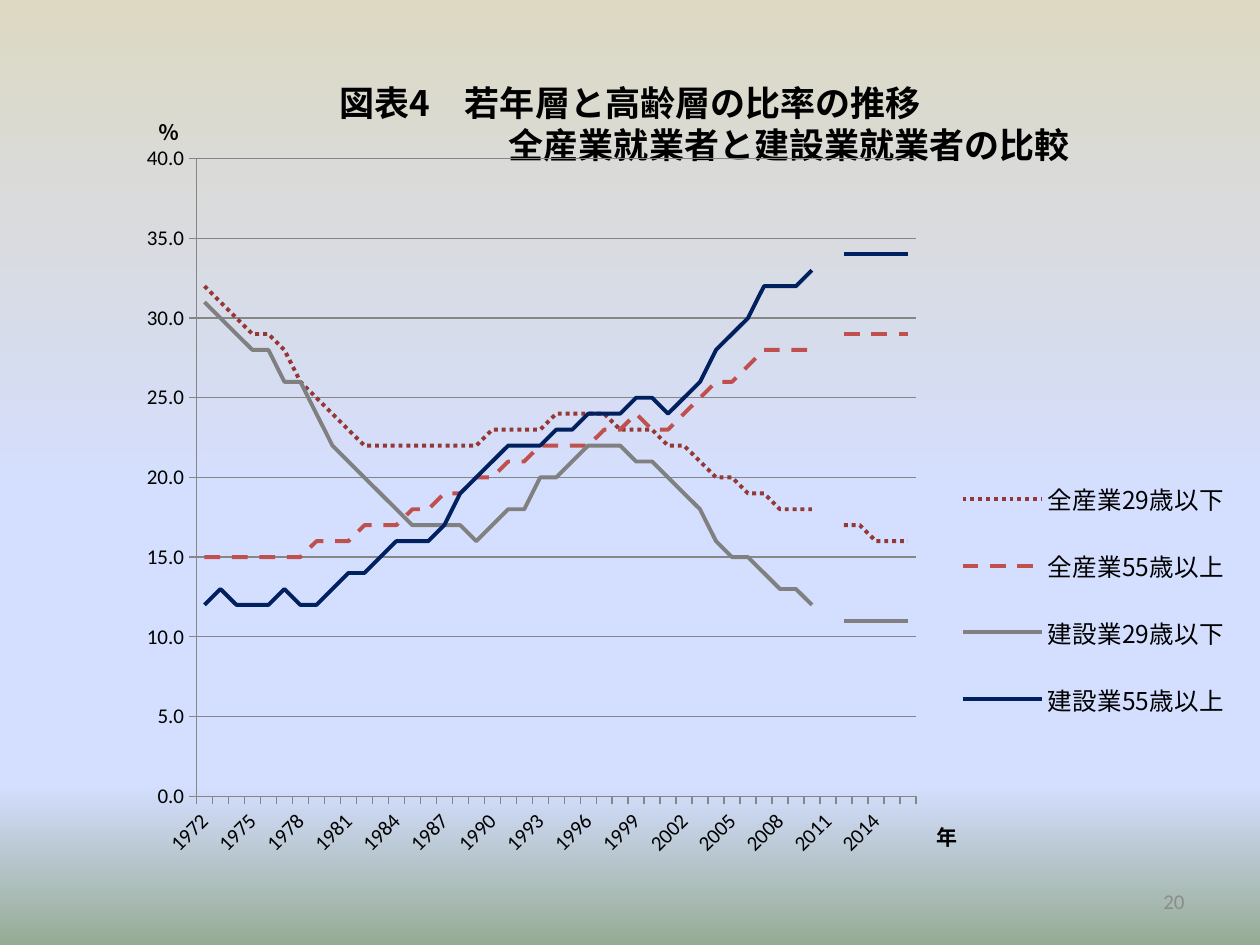
from lxml.etree import SubElement
from pptx import Presentation
from pptx.chart.data import CategoryChartData
from pptx.dml.color import RGBColor
from pptx.enum.chart import XL_CHART_TYPE, XL_LEGEND_POSITION, XL_TICK_MARK
from pptx.enum.dml import MSO_LINE
from pptx.enum.text import MSO_ANCHOR, MSO_AUTO_SIZE, PP_ALIGN
from pptx.oxml.ns import qn
from pptx.util import Inches, Pt

TITLE_LINES = [("図表4　若年層と高齢層の比率の推移", 0),
               ("全産業就業者と建設業就業者の比較", 2.53)]  # text, indent in inches
PAGE_NUMBER = "20"
YEAR_TITLE, SHARE_TITLE = "年", "％"
YEARS = [str(year) for year in range(1972, 2017)]
SERIES = [
    ("全産業29歳以下", "953735", MSO_LINE.ROUND_DOT,
     [32, 31, 30, 29, 29, 28, 26, 25, 24, 23, 22, 22, 22, 22, 22,
      22, 22, 22, 23, 23, 23, 23, 24, 24, 24, 24, 23, 23, 23, 22,
      22, 21, 20, 20, 19, 19, 18, 18, 18, None, 17, 17, 16, 16, 16]),
    ("全産業55歳以上", "C0504D", MSO_LINE.DASH,
     [15, 15, 15, 15, 15, 15, 15, 16, 16, 16, 17, 17, 17, 18, 18,
      19, 19, 20, 20, 21, 21, 22, 22, 22, 22, 23, 23, 24, 23, 23,
      24, 25, 26, 26, 27, 28, 28, 28, 28, None, 29, 29, 29, 29, 29]),
    ("建設業29歳以下", "808080", MSO_LINE.SOLID,
     [31, 30, 29, 28, 28, 26, 26, 24, 22, 21, 20, 19, 18, 17, 17,
      17, 17, 16, 17, 18, 18, 20, 20, 21, 22, 22, 22, 21, 21, 20,
      19, 18, 16, 15, 15, 14, 13, 13, 12, None, 11, 11, 11, 11, 11]),
    ("建設業55歳以上", "002060", MSO_LINE.SOLID,
     [12, 13, 12, 12, 12, 13, 12, 12, 13, 14, 14, 15, 16, 16, 16,
      17, 19, 20, 21, 22, 22, 22, 23, 23, 24, 24, 24, 25, 25, 24,
      25, 26, 28, 29, 30, 32, 32, 32, 33, None, 34, 34, 34, 34, 34]),
]
CHART_WIDTH, CHART_HEIGHT = 10.08, 7.5
THEME = {
    "latin": "Calibri", "cjk": "Noto Sans CJK JP",
    "text": "000000", "muted": "8C8C8C", "grid": "868686",
    "title": 20, "legend": 14, "label": 12, "line": 2.25, "thin": 0.75,
    "background": [(0, "DDD9C3"), (53, "D4DEFF"), (83, "D4DEFF"), (100, "96AB94")],
}


def style_font(font, size, color=THEME["text"], name=THEME["cjk"], bold=False):
    font.size, font.bold, font.name = Pt(size), bold, name
    font.color.rgb = RGBColor.from_string(color)
    latin = font._rPr.find(qn("a:latin"))
    latin.addnext(latin.makeelement(qn("a:ea"), {"typeface": THEME["cjk"]}))


def write(para, text, **style):
    span = para.add_run()
    span.text = text
    style_font(span.font, **style)


def style_line(line, color, width):
    line.color.rgb = RGBColor.from_string(color)
    line.width = Pt(width)


def set_layout(element, index, **inches):
    """Fix a chart part at x, y, w, h in inches within the chart area."""
    for old in element.findall(qn("c:layout")):
        element.remove(old)
    layout = element.makeelement(qn("c:layout"), {})
    element.insert(index, layout)
    manual = SubElement(layout, qn("c:manualLayout"))
    if element.tag == qn("c:plotArea"):
        SubElement(manual, qn("c:layoutTarget"), val="inner")
    for side in ("x", "y"):
        SubElement(manual, qn(f"c:{side}Mode"), val="edge")
    for side, length in inches.items():
        whole = CHART_WIDTH if side in "xw" else CHART_HEIGHT
        SubElement(manual, qn(f"c:{side}"), val=str(length / whole))


def paint_background(page):
    fill = page.background.fill
    fill.gradient()
    fill.gradient_angle = 270
    stops = page._element.find(".//" + qn("a:gsLst"))
    stops.clear()
    for percent, color in THEME["background"]:
        stop = SubElement(stops, qn("a:gs"), pos=str(percent * 1000))
        SubElement(stop, qn("a:srgbClr"), val=color)


def add_title(page):
    title = page.shapes.title
    title.left, title.top = Inches(0.5), Inches(0.48)
    title.width, title.height = Inches(9), Inches(1)
    frame = title.text_frame
    frame.auto_size = MSO_AUTO_SIZE.NONE
    frame.vertical_anchor = MSO_ANCHOR.MIDDLE
    for number, (text, indent) in enumerate(TITLE_LINES):
        para = frame.add_paragraph() if number else frame.paragraphs[0]
        para.alignment = PP_ALIGN.CENTER
        para._p.get_or_add_pPr().set("marL", str(Inches(indent)))
        write(para, text, size=THEME["title"], bold=True)


def style_axis(axis, title, rotation, x, y):
    axis.major_tick_mark = XL_TICK_MARK.OUTSIDE
    axis.minor_tick_mark = XL_TICK_MARK.NONE
    style_line(axis.format.line, THEME["grid"], THEME["thin"])
    style_font(axis.tick_labels.font, THEME["label"], name=THEME["latin"])
    axis._element.find(f"{qn('c:txPr')}/{qn('a:bodyPr')}").set("rot", str(rotation * 60000))
    frame = axis.axis_title.text_frame
    write(frame.paragraphs[0], title, size=THEME["label"], bold=True)
    heading = axis.axis_title._element
    body = heading.find(".//" + qn("a:bodyPr"))
    body.set("rot", "0")
    body.set("vert", "horz")
    set_layout(heading, 1, x=x, y=y)


def add_share_chart(page):
    data = CategoryChartData(number_format="0.0")
    data.categories = YEARS
    for name, _, _, values in SERIES:
        data.add_series(name, values)
    chart = page.shapes.add_chart(XL_CHART_TYPE.LINE, 0, 0, Inches(CHART_WIDTH),
                                  Inches(CHART_HEIGHT), data).chart
    chart.has_title = False
    style_font(chart.font, 10, name=THEME["latin"])
    plot = chart.plots[0]
    plot.vary_by_categories = False
    for series, (_, color, dash, _) in zip(plot.series, SERIES):
        series.smooth = False
        style_line(series.format.line, color, THEME["line"])
        series.format.line.dash_style = dash

    years, shares = chart.category_axis, chart.value_axis
    style_axis(years, YEAR_TITLE, -45, x=7.4, y=6.46)
    skip = years._element.makeelement(qn("c:tickLblSkip"), {"val": "3"})
    years._element.find(qn("c:noMultiLvlLbl")).addprevious(skip)
    style_axis(shares, SHARE_TITLE, 0, x=1.23, y=0.87)
    shares.minimum_scale, shares.maximum_scale, shares.major_unit = 0, 40, 5
    shares.tick_labels.number_format = "0.0"
    shares.tick_labels.number_format_is_linked = False
    shares.has_major_gridlines = True
    style_line(shares.major_gridlines.format.line, THEME["grid"], THEME["thin"])

    chart.has_legend = True
    legend = chart.legend
    legend.position = XL_LEGEND_POSITION.RIGHT
    legend.include_in_layout = False
    style_font(legend.font, THEME["legend"])
    set_layout(legend._element, 1, x=7.47, y=3.57, w=2.42, h=2.37)
    plot_area = chart._chartSpace.find(".//" + qn("c:plotArea"))
    set_layout(plot_area, 0, x=1.56, y=1.26, w=5.71, h=5.06)


def add_page_number(page):
    box = page.shapes.add_textbox(Inches(7.17), Inches(6.95), Inches(2.33), Inches(0.4))
    frame = box.text_frame
    frame.word_wrap = True
    frame.vertical_anchor = MSO_ANCHOR.MIDDLE
    frame.paragraphs[0].alignment = PP_ALIGN.RIGHT
    write(frame.paragraphs[0], PAGE_NUMBER, size=THEME["label"],
          color=THEME["muted"], name=THEME["latin"])


def main():
    deck = Presentation()
    deck.slide_width, deck.slide_height = Inches(10), Inches(7.5)
    page = deck.slides.add_slide(deck.slide_layouts[5])
    paint_background(page)
    add_page_number(page)
    add_share_chart(page)
    add_title(page)
    deck.save("out.pptx")


if __name__ == "__main__":
    main()
